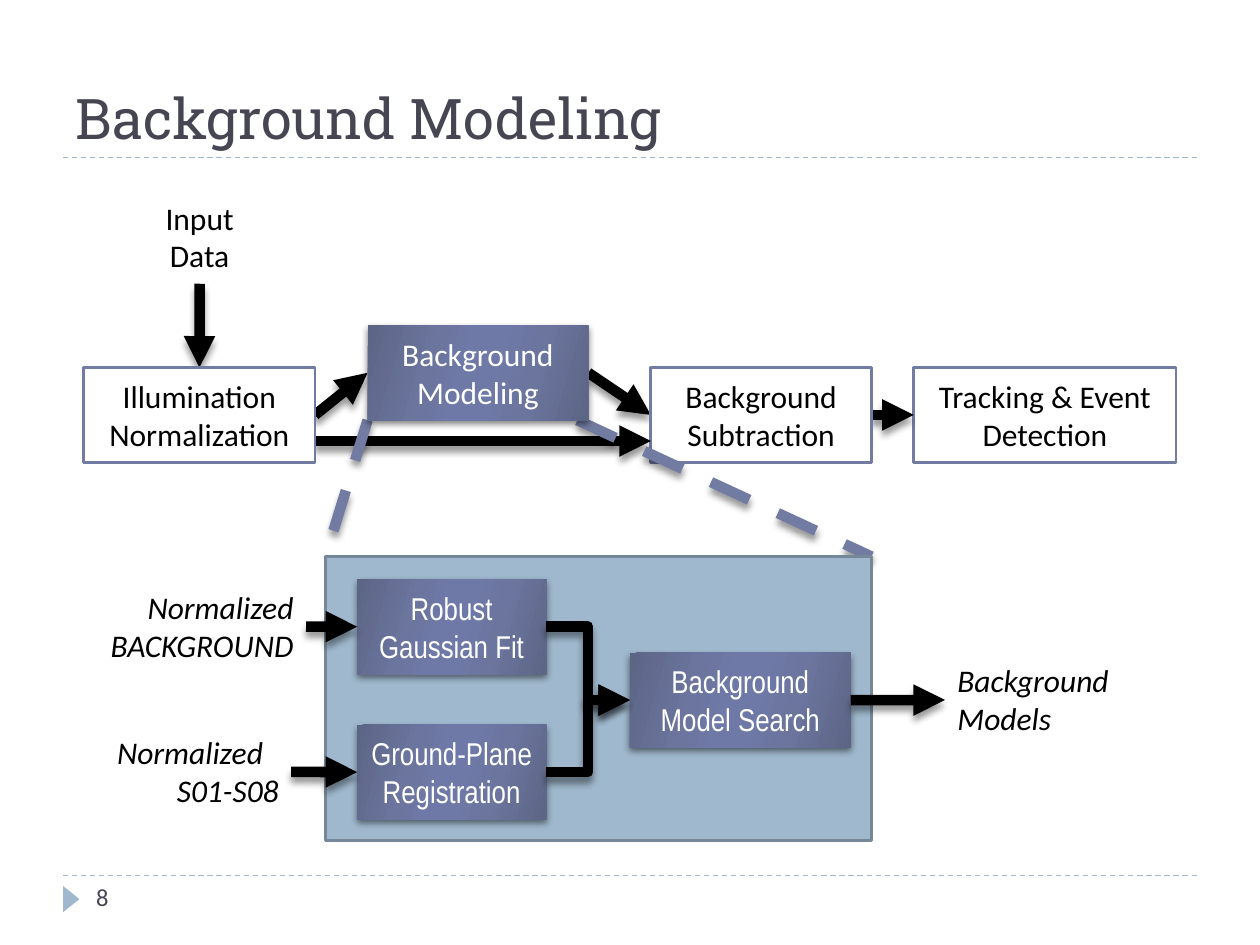
"""Build the Background Modeling slide with its pipeline and detail diagram."""
from dataclasses import dataclass
from typing import Optional, Union

from pptx import Presentation
from pptx.dml.color import RGBColor
from pptx.enum.dml import MSO_LINE
from pptx.enum.shapes import MSO_CONNECTOR, MSO_SHAPE
from pptx.enum.text import MSO_ANCHOR, MSO_AUTO_SIZE, PP_ALIGN
from pptx.oxml import parse_xml
from pptx.oxml.ns import nsdecls, qn
from pptx.util import Cm, Pt

INK, SLATE, PALE, WHITE, BLACK = "464653", "727CA3", "9FB8CD", "FFFFFF", "000000"
GRADIENT = ((0, "5D6585"), (30, "6B759E"), (45, "6E79A7"),
            (55, "6E79A7"), (73, "6B759E"), (100, "5D6585"))
TOP, LEFT, BOTTOM, RIGHT = range(4)


@dataclass(frozen=True)
class Style:
    color: str = BLACK
    font: str = "Calibri"
    size: int = 18
    italic: bool = False
    anchor: MSO_ANCHOR = MSO_ANCHOR.MIDDLE
    aligns: tuple = (PP_ALIGN.CENTER,)
    fill: Optional[str] = None
    line: Optional[str] = None
    gradient: bool = False


@dataclass(frozen=True)
class Box:
    text: str
    left: float
    top: float
    width: float
    height: float
    style: Style


@dataclass(frozen=True)
class Joint:
    box: Box
    side: int


End = Union[Joint, tuple]


@dataclass(frozen=True)
class Link:
    begin: End
    end: End
    elbow: bool = False
    color: str = BLACK
    width: float = 6
    dashed: bool = False
    arrow: bool = True
    shadow: bool = True


def rgb(value: str) -> RGBColor:
    """Turn a hex string into a colour."""
    return RGBColor.from_string(value)


def add_shadow(properties, alpha: int, distance: float) -> None:
    """Give shape properties a soft shadow that falls downwards."""
    effects = properties.find(qn("a:effectLst"))
    if effects is None:
        effects = parse_xml(f"<a:effectLst {nsdecls('a')}/>")
        properties.append(effects)
    effects.append(parse_xml(
        f'<a:outerShdw {nsdecls("a")} blurRad="{Pt(4)}" dist="{Pt(distance)}" dir="5400000" '
        f'rotWithShape="0"><a:srgbClr val="{BLACK}"><a:alpha val="{alpha * 1000}"/>'
        '</a:srgbClr></a:outerShdw>'))


def fill_gradient(shape) -> None:
    """Fill a shape with the slanted slate gradient."""
    shape.fill.gradient()
    stops = "".join(f'<a:gs pos="{place * 1000}"><a:srgbClr val="{color}"/></a:gs>'
                    for place, color in GRADIENT)
    properties = shape._element.spPr
    properties.replace(properties.find(qn("a:gradFill")), parse_xml(
        f'<a:gradFill {nsdecls("a")}><a:gsLst>{stops}</a:gsLst>'
        f'<a:lin ang="{16 * 60000}" scaled="0"/></a:gradFill>'))


def write_text(shape, text: str, style: Style) -> None:
    """Write text into a shape and format it."""
    frame = shape.text_frame
    frame.text = text
    frame.word_wrap = True
    frame.auto_size = MSO_AUTO_SIZE.NONE
    frame.vertical_anchor = style.anchor
    for index, para in enumerate(frame.paragraphs):
        para.alignment = style.aligns[index % len(style.aligns)]
        for span in para.runs:
            span.font.name = style.font
            span.font.size = Pt(style.size)
            span.font.italic = style.italic
            span.font.color.rgb = rgb(style.color)


def draw_box(page, box: Box):
    """Draw a box or, without any fill, a plain label."""
    style = box.style
    place = [Cm(value) for value in (box.left, box.top, box.width, box.height)]
    if not (style.fill or style.gradient):
        shape = page.shapes.add_textbox(*place)
    else:
        shape = page.shapes.add_shape(MSO_SHAPE.RECTANGLE, *place)
        shape.shadow.inherit = False
        if style.gradient:
            fill_gradient(shape)
            add_shadow(shape._element.spPr, 50, 2)
        else:
            shape.fill.solid()
            shape.fill.fore_color.rgb = rgb(style.fill)
        if style.line:
            shape.line.color.rgb = rgb(style.line)
            shape.line.width = Pt(1.5)
        else:
            shape.line.fill.background()
    if box.text:
        write_text(shape, box.text, style)
    return shape


def locate(end: End) -> tuple:
    """Return the point of a link's end in centimetres."""
    if not isinstance(end, Joint):
        return end
    box = end.box
    across, down = {TOP: (0.5, 0), LEFT: (0, 0.5), BOTTOM: (0.5, 1), RIGHT: (1, 0.5)}[end.side]
    return box.left + across * box.width, box.top + down * box.height


def draw_link(page, link: Link):
    """Draw a line or an arrow."""
    kind = MSO_CONNECTOR.ELBOW if link.elbow else MSO_CONNECTOR.STRAIGHT
    points = [Cm(value) for value in (*locate(link.begin), *locate(link.end))]
    connector = page.shapes.add_connector(kind, *points)
    connector.line.color.rgb = rgb(link.color)
    connector.line.width = Pt(link.width)
    if link.dashed:
        connector.line.dash_style = MSO_LINE.DASH
    properties = connector._element.spPr
    if link.arrow:
        properties.find(qn("a:ln")).append(parse_xml(f'<a:tailEnd {nsdecls("a")} type="triangle"/>'))
    if link.shadow:
        add_shadow(properties, 40, 3.4)
    else:
        properties.append(parse_xml(f"<a:effectLst {nsdecls('a')}/>"))
    return connector


def draw_all(page, items: list) -> None:
    """Draw boxes and links from back to front, then join the links."""
    drawn = {item: draw_box(page, item) if isinstance(item, Box) else draw_link(page, item)
             for item in items}
    for link in (item for item in items if isinstance(item, Link)):
        if isinstance(link.begin, Joint):
            drawn[link].begin_connect(drawn[link.begin.box], link.begin.side)
        if isinstance(link.end, Joint):
            drawn[link].end_connect(drawn[link.end.box], link.end.side)


def rule(top: float) -> Link:
    """Describe a dashed rule across the page."""
    return Link((1.27, top), (24.13, top), color=PALE, width=0.75,
                dashed=True, arrow=False, shadow=False)


def zoom(begin: tuple, end: tuple) -> Link:
    """Describe a dashed line from a stage to its detail panel."""
    return Link(begin, end, color=SLATE, dashed=True, arrow=False)


def label(*aligns: PP_ALIGN) -> Style:
    """Describe an italic label with one alignment per paragraph."""
    return Style(italic=True, anchor=MSO_ANCHOR.TOP, aligns=aligns)


def main() -> None:
    """Build and save the deck."""
    deck = Presentation()
    deck.slide_width, deck.slide_height = Cm(25.4), Cm(19.05)
    page = deck.slides.add_slide(deck.slide_layouts[5])

    title = page.shapes.title
    title.left, title.top, title.width, title.height = Cm(1.27), Cm(0.43), Cm(22.86), Cm(2.74)
    write_text(title, "Background Modeling",
               Style(INK, "Roboto Slab", 32, anchor=MSO_ANCHOR.BOTTOM, aligns=(PP_ALIGN.LEFT,)))
    marker = page.shapes.add_shape(MSO_SHAPE.ISOSCELES_TRIANGLE, Cm(1.17), Cm(17.96), Cm(0.53), Cm(0.33))
    marker.rotation = 90
    marker.shadow.inherit = False
    marker.fill.solid()
    marker.fill.fore_color.rgb = rgb(PALE)
    marker.line.fill.background()

    stage = Style(fill=WHITE, line=SLATE)
    step = Style(WHITE, "Arial Narrow", gradient=True)
    number = Style(INK, size=14, anchor=MSO_ANCHOR.TOP, aligns=(PP_ALIGN.LEFT,))
    page_number = Box("8", 1.69, 17.65, 5.5, 1.02, number)
    source = Box("Input Data", 2.54, 3.81, 2.97, 1.91, Style())
    illumination = Box("Illumination\nNormalization", 1.69, 7.41, 4.66, 1.91, stage)
    modeling = Box("Background\nModeling", 7.41, 6.56, 4.45, 1.91, Style(WHITE, gradient=True))
    subtraction = Box("Background Subtraction", 13.12, 7.41, 4.45, 1.91, stage)
    tracking = Box("Tracking & Event Detection", 18.42, 7.41, 5.29, 1.91, stage)
    panel = Box("", 6.56, 11.22, 11.01, 5.72, Style(fill=PALE, line="768898"))
    gaussian = Box("Robust Gaussian Fit", 7.2, 11.68, 3.81, 1.91, step)
    ground = Box("Ground-Plane Registration", 7.2, 14.61, 3.81, 1.91, step)
    search = Box("Background Model Search", 12.7, 13.16, 4.45, 1.91, step)
    background = Box("Normalized\nBACKGROUND", 1.07, 11.73, 5.1, 1.8, label(PP_ALIGN.RIGHT))
    sequences = Box("Normalized\nS01-S08", 2.11, 14.66, 3.76, 1.8, label(PP_ALIGN.LEFT, PP_ALIGN.RIGHT))
    models = Box("Background Models", 19.05, 13.21, 4.24, 1.8, label(PP_ALIGN.LEFT))

    draw_all(page, [
        rule(17.65), rule(3.17), page_number, tracking,
        Link(Joint(source, BOTTOM), Joint(illumination, TOP)),
        Link(Joint(illumination, RIGHT), Joint(modeling, LEFT)),
        Link(Joint(subtraction, RIGHT), Joint(tracking, LEFT)),
        Link(Joint(modeling, RIGHT), Joint(subtraction, LEFT)),
        source, subtraction,
        Link((6.35, 8.89), (13.12, 8.89)),
        zoom((7.41, 8.47), (6.56, 11.22)),
        zoom((11.64, 8.47), (17.57, 11.22)),
        panel, gaussian, ground, search,
        *(Link(Joint(box, RIGHT), Joint(search, LEFT), elbow=True) for box in (ground, gaussian)),
        Link(Joint(background, RIGHT), Joint(gaussian, LEFT)),
        Link(Joint(search, RIGHT), Joint(models, LEFT)),
        background, sequences,
        Link(Joint(sequences, RIGHT), Joint(ground, LEFT)),
        modeling, models, illumination,
    ])
    deck.save("out.pptx")


if __name__ == "__main__":
    main()
